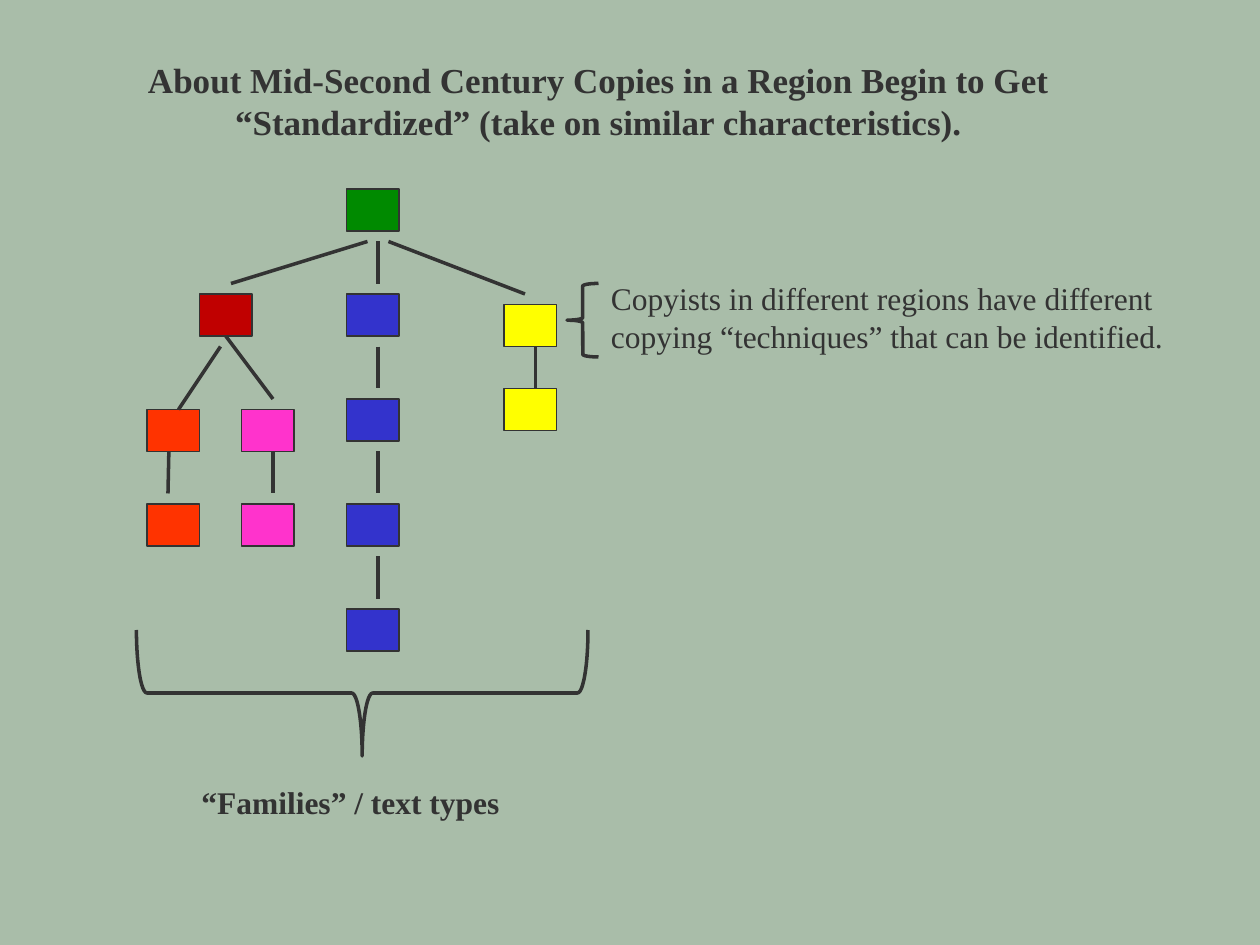
"""Build a slide showing how manuscript copies branch into text families."""
from dataclasses import dataclass

from lxml import etree
from pptx import Presentation
from pptx.dml.color import RGBColor
from pptx.enum.shapes import MSO_CONNECTOR, MSO_SHAPE
from pptx.enum.text import MSO_AUTO_SIZE, PP_ALIGN
from pptx.oxml.ns import qn
from pptx.shapes.autoshape import Shape
from pptx.shapes.connector import Connector
from pptx.slide import Slide
from pptx.util import Pt

RECTANGLE = MSO_SHAPE.RECTANGLE
LEFT_BRACE = MSO_SHAPE.LEFT_BRACE
STRAIGHT = MSO_CONNECTOR.STRAIGHT
FIT_TEXT = MSO_AUTO_SIZE.SHAPE_TO_FIT_TEXT
LEFT, CENTER = PP_ALIGN.LEFT, PP_ALIGN.CENTER
BOTTOM_SIDE = 2

INK = "333333"
BACKGROUND = "A9BDA9"
FONT = "Times New Roman"
COPY_WIDTH, COPY_HEIGHT = 30, 24
BOX_LINE, BRANCH_LINE = 0.75, 2


@dataclass(frozen=True)
class Family:
    color: str
    left: float
    tops: tuple[float, ...]


@dataclass(frozen=True)
class Branch:
    x1: float
    y1: float
    x2: float
    y2: float


@dataclass(frozen=True)
class Brace:
    left: float
    top: float
    width: float
    height: float
    rotation: float = 0


@dataclass(frozen=True)
class Label:
    text: str
    left: float
    top: float
    width: float
    height: float
    size: float = 18
    bold: bool = False
    align: PP_ALIGN = LEFT


ROOT = Family("008A00", 198, (108,))
RED = Family("C00000", 114, (168,))
OTHER_FAMILIES = (
    Family("FFFF00", 288, (174, 222)),
    Family("3333CC", 198, (168, 228, 288, 348)),
    Family("FF3300", 84, (234, 288)),
    Family("FF33CC", 138, (234, 288)),
)
BRANCHES = (
    *(Branch(216, top, 216, top + 24) for top in (138, 198, 258, 318)),
    Branch(126, 198, 102, 234),
    Branch(96.5, 258, 96, 282),
    Branch(156, 258, 156, 282),
    Branch(222, 138, 300, 168),
    Branch(210, 138, 132, 162),
    Branch(306, 198, 306, 222),
)
RED_TO_PINK = Branch(129, 192, 156, 228)
BRACES = (Brace(171, 267, 72, 258, 270), Brace(324, 162, 18, 42))
LABELS = (
    Label(
        "About Mid-Second Century Copies in a Region Begin to Get "
        "“Standardized” (take on similar characteristics).",
        42, 30, 600, 55.5, size=20, bold=True, align=CENTER,
    ),
    Label("“Families” / text types", 108, 444, 198, 29, bold=True),
    Label(
        "Copyists in different regions have different "
        "copying “techniques” that can be identified.",
        342, 156, 366, 51,
    ),
)


def color(value: str) -> RGBColor:
    """Turn a hex string into a colour."""
    return RGBColor.from_string(value)


def draw_line_format(item: Shape | Connector, width: float) -> None:
    """Give an outline or connector the ink colour and a width."""
    item.line.color.rgb = color(INK)
    item.line.width = Pt(width)


def draw_family(page: Slide, family: Family) -> list[Shape]:
    """Draw one column of copies and return its boxes."""
    boxes = []
    for top in family.tops:
        box = page.shapes.add_shape(
            RECTANGLE, Pt(family.left), Pt(top), Pt(COPY_WIDTH), Pt(COPY_HEIGHT)
        )
        box.shadow.inherit = False
        box.fill.solid()
        box.fill.fore_color.rgb = color(family.color)
        draw_line_format(box, BOX_LINE)
        boxes.append(box)
    return boxes


def draw_branch(page: Slide, branch: Branch) -> Connector:
    """Draw a straight line of descent without a shadow."""
    line = page.shapes.add_connector(
        STRAIGHT, Pt(branch.x1), Pt(branch.y1), Pt(branch.x2), Pt(branch.y2)
    )
    draw_line_format(line, BRANCH_LINE)
    etree.SubElement(line._element.spPr, qn("a:effectLst"))
    return line


def draw_brace(page: Slide, brace: Brace) -> None:
    """Draw an unfilled brace."""
    shape = page.shapes.add_shape(
        LEFT_BRACE, Pt(brace.left), Pt(brace.top), Pt(brace.width), Pt(brace.height)
    )
    shape.shadow.inherit = False
    shape.rotation = brace.rotation
    shape.fill.background()
    draw_line_format(shape, BRANCH_LINE)


def draw_label(page: Slide, label: Label) -> None:
    """Draw a wrapped text box with one formatted span."""
    box = page.shapes.add_textbox(
        Pt(label.left), Pt(label.top), Pt(label.width), Pt(label.height)
    )
    frame = box.text_frame
    frame.word_wrap = True
    frame.auto_size = FIT_TEXT
    para = frame.paragraphs[0]
    para.alignment = label.align
    span = para.add_run()
    span.text = label.text
    formats = {"name": FONT, "size": Pt(label.size), "bold": label.bold}
    for name, value in formats.items():
        setattr(span.font, name, value)
    span.font.color.rgb = color(INK)


def main() -> None:
    """Assemble the slide and save the deck."""
    deck = Presentation()
    deck.slide_width, deck.slide_height = Pt(720), Pt(540)
    page = deck.slides.add_slide(deck.slide_layouts[6])
    page.background.fill.solid()
    page.background.fill.fore_color.rgb = color(BACKGROUND)

    draw_family(page, ROOT)
    red_box = draw_family(page, RED)[0]
    for family in OTHER_FAMILIES:
        draw_family(page, family)
    for branch in BRANCHES:
        draw_branch(page, branch)
    draw_branch(page, RED_TO_PINK).begin_connect(red_box, BOTTOM_SIDE)
    for brace in BRACES:
        draw_brace(page, brace)
    for label in LABELS:
        draw_label(page, label)
    deck.save("out.pptx")


if __name__ == "__main__":
    main()
